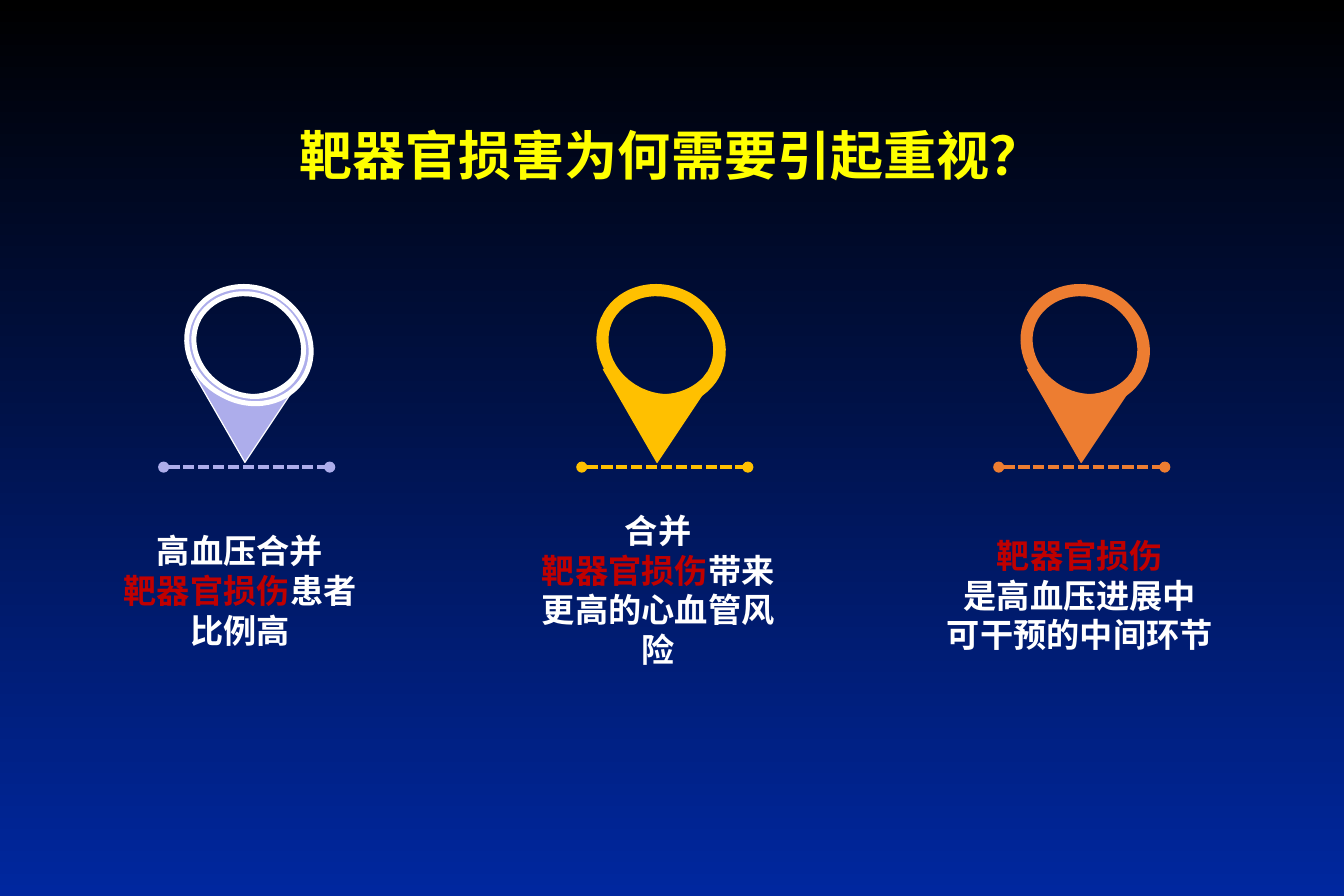
from math import cos, radians, sin

from lxml import etree
from pptx import Presentation
from pptx.dml.color import RGBColor
from pptx.enum.dml import MSO_LINE
from pptx.enum.shapes import MSO_CONNECTOR
from pptx.enum.text import MSO_ANCHOR, MSO_AUTO_SIZE, PP_ALIGN
from pptx.oxml.ns import qn
from pptx.util import Inches, Pt

STRAIGHT = MSO_CONNECTOR.STRAIGHT
DASH = MSO_LINE.SQUARE_DOT
CENTER = PP_ALIGN.CENTER
TOP, MIDDLE = MSO_ANCHOR.TOP, MSO_ANCHOR.MIDDLE
GROW, FIXED = MSO_AUTO_SIZE.SHAPE_TO_FIT_TEXT, MSO_AUTO_SIZE.NONE
FONT = "Noto Sans CJK SC"
COLORS = {"top": "000000", "bottom": "00279F", "title": "FFFF00", "text": "FFFFFF",
          "accent": "C00000", "lilac": "ADADEB", "gold": "FFC000", "orange": "ED7D31"}

CONE = {"box": (0.09, 0.71, 0.95, 0.77), "rotation": 181.8, "width": 0.75, "contours": [
    [[(0.1, 0.69)], [(0.18, 0.69)], [(0.21, 0.74)],
     [(0.25, 0.78), (0.3, 0.82), (0.35, 0.85)],
     [(0.55, 0.95), (0.8, 0.91), (0.94, 0.76)],
     [(0.97, 0.72)], [(1.05, 0.72)], [(0.55, 1.47)]]]}
RING = {"box": (0.11, -0.05, 0.95, 1.07), "rotation": 299.2, "width": 3, "contours": [
    [[(0.17, 0.26)],
     [(0.06, 0.46), (0.15, 0.72), (0.38, 0.85)],
     [(0.61, 0.98), (0.88, 0.92), (0.99, 0.72)],
     [(1.11, 0.51), (1.01, 0.25), (0.79, 0.12)],
     [(0.56, 0), (0.29, 0.06), (0.17, 0.26)]],
    [[(0.12, 0.23)],
     [(0.25, 0), (0.56, -0.07), (0.82, 0.07)],
     [(1.07, 0.22), (1.18, 0.52), (1.05, 0.75)],
     [(0.92, 0.98), (0.61, 1.05), (0.35, 0.9)],
     [(0.09, 0.76), (-0.01, 0.45), (0.12, 0.23)]]]}

REASONS = [
    {"color": "lilac", "outline": "text", "pin": 1.5, "line": 1.37,
     "box": (0.84, 4.39, 2.34, 1.11),
     "lines": [[("高血压合并", "text")],
               [("靶器官损伤", "accent"), ("患者比例高", "text")]]},
    {"color": "gold", "outline": "gold", "pin": 4.95, "line": 4.87,
     "box": (4.34, 4.22, 2.34, 1.45),
     "lines": [[("合并", "text")],
               [("靶器官损伤", "accent"), ("带来更高的心血管风险", "text")]]},
    {"color": "orange", "outline": "orange", "pin": 8.5, "line": 8.36,
     "box": (7.4, 4.43, 3.28, 1.11),
     "lines": [[("靶器官损伤", "accent")],
               [("是高血压进展中", "text")],
               [("可干预的中间环节", "text")]]},
]


def rgb(name):
    """Return the named colour."""
    return RGBColor.from_string(COLORS[name])


def turn_back(point, box, rotation):
    """Give a point's place in the box before the box is rotated."""
    left, top, width, height = box
    dx, dy = point[0] - left - width / 2, point[1] - top - height / 2
    c, d = cos(radians(rotation)), sin(radians(rotation))
    return Inches(dx * c + dy * d + width / 2), Inches(dy * c - dx * d + height / 2)


def write_curves(sp, contours, width, height):
    """Give a freeform its lines and cubic curves."""
    outline = sp._element.spPr.find(".//" + qn("a:path"))
    for child in list(outline):
        outline.remove(child)
    outline.set("w", str(width))
    outline.set("h", str(height))
    for contour in contours:
        for i, part in enumerate(contour):
            tag = "a:moveTo" if i == 0 else "a:cubicBezTo" if len(part) == 3 else "a:lnTo"
            step = etree.SubElement(outline, qn(tag))
            for x, y in part:
                etree.SubElement(step, qn("a:pt"), x=str(x), y=str(y))
        etree.SubElement(outline, qn("a:close"))


def add_outline(s, left, top, part, fill, outline):
    """Draw one rotated freeform of a pin and return it."""
    box, rotation = part["box"], part["rotation"]
    contours = [[[turn_back(pt, box, rotation) for pt in pts] for pts in contour]
                for contour in part["contours"]]
    corners = [pts[-1] for pts in contours[0]]
    builder = s.shapes.build_freeform(*corners[0])
    builder.add_line_segments(corners[1:])
    sp = builder.convert_to_shape()
    sp.left, sp.top = Inches(left + box[0]), Inches(top + box[1])
    sp.width, sp.height = Inches(box[2]), Inches(box[3])
    sp.rotation = rotation
    write_curves(sp, contours, sp.width, sp.height)
    sp.shadow.inherit = False
    sp.fill.solid()
    sp.fill.fore_color.rgb = rgb(fill)
    sp.line.color.rgb = rgb(outline)
    sp.line.width = Pt(part["width"])
    return sp


def add_pin(s, left, top, color, outline):
    """Draw a map pin as a group of cone and ring."""
    s.shapes.add_group_shape([add_outline(s, left, top, part, color, outline)
                              for part in (CONE, RING)])


def add_dashed_line(s, left, top, width, color):
    """Draw a dashed line with round ends."""
    cn = s.shapes.add_connector(STRAIGHT, Inches(left), Inches(top),
                                Inches(left + width), Inches(top))
    cn.line.color.rgb = rgb(color)
    cn.line.width = Pt(2.25)
    cn.line.dash_style = DASH
    ln = cn.line._get_or_add_ln()
    for end in ("a:headEnd", "a:tailEnd"):
        etree.SubElement(ln, qn(end), type="oval")
    etree.SubElement(cn._element.spPr, qn("a:effectLst"))


def add_text(s, box, lines, size, anchor, auto_size):
    """Write centred bold lines of coloured runs in a box."""
    tf = s.shapes.add_textbox(*map(Inches, box)).text_frame
    tf.word_wrap = True
    tf.auto_size = auto_size
    tf.vertical_anchor = anchor
    for i, line in enumerate(lines):
        p = tf.add_paragraph() if i else tf.paragraphs[0]
        p.alignment = CENTER
        p.font.size = Pt(size)
        p.font.bold = True
        p.font.name = FONT
        etree.SubElement(p._p.pPr.find(qn("a:defRPr")), qn("a:ea"), typeface=FONT)
        for text, color in line:
            r = p.add_run()
            r.text = text
            r.font.color.rgb = rgb(color)


def add_background(s):
    """Fill the slide from black at the top to blue."""
    fill = s.background.fill
    fill.gradient()
    fill.gradient_angle = 270
    for stop, name, position in zip(fill.gradient_stops, ("top", "bottom"), (0, 1)):
        stop.color.rgb = rgb(name)
        stop.position = position


def add_reason(s, reason):
    """Place one pin with its line and caption."""
    add_pin(s, reason["pin"], 2.4, reason["color"], reason["outline"])
    add_dashed_line(s, reason["line"], 3.91, 1.39, reason["color"])
    add_text(s, reason["box"], reason["lines"], 20, TOP, GROW)


def main():
    """Build and save the slide."""
    prs = Presentation()
    prs.slide_width, prs.slide_height = Inches(11.25), Inches(7.5)
    s = prs.slides.add_slide(prs.slide_layouts[6])
    add_background(s)
    add_text(s, (0.84, 0.67, 9.56, 1.25), [[("靶器官损害为何需要引起重视？", "title")]],
             32, MIDDLE, FIXED)
    for reason in REASONS:
        add_reason(s, reason)
    prs.save("out.pptx")


if __name__ == "__main__":
    main()
